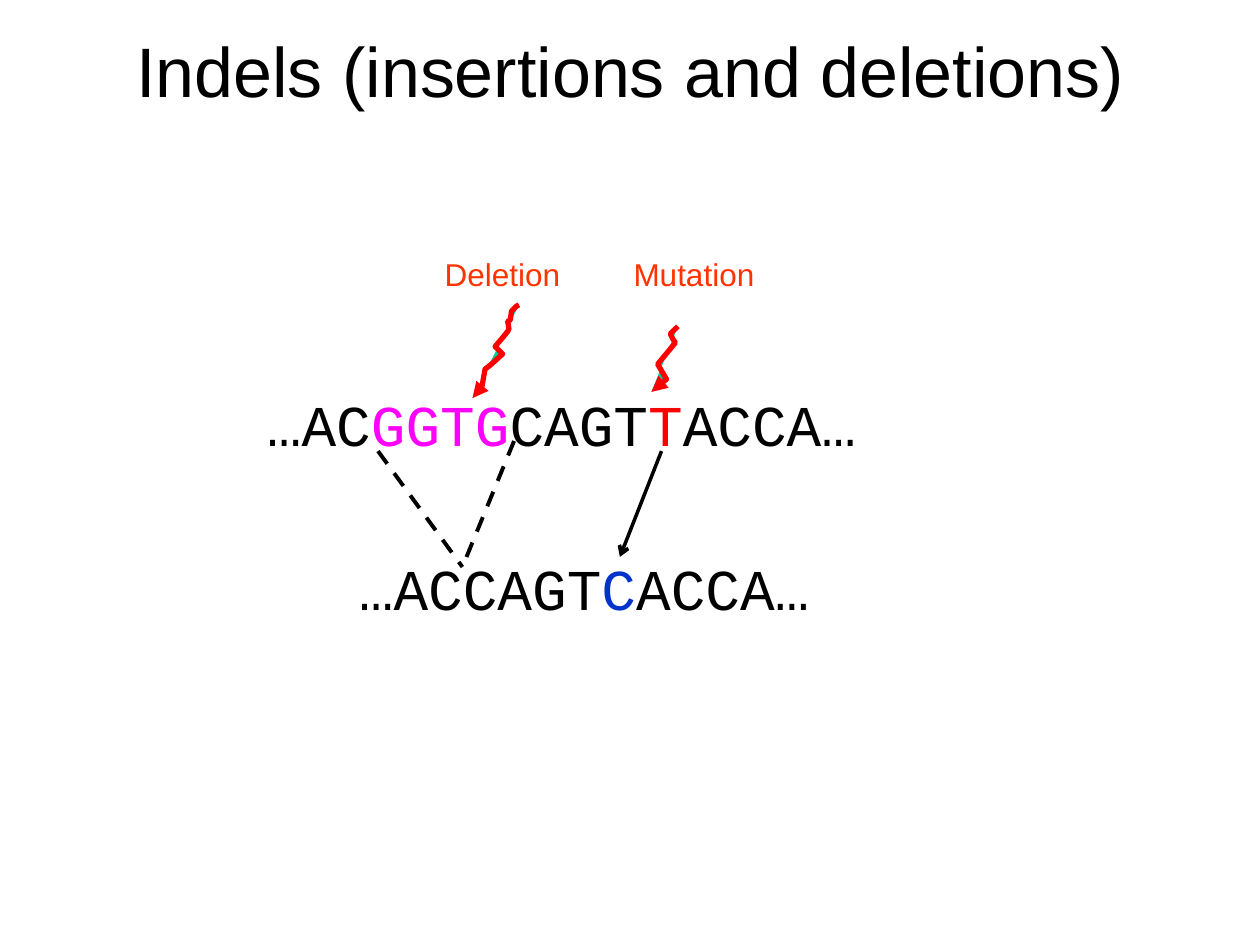
from lxml.etree import SubElement
from pptx import Presentation
from pptx.dml.color import RGBColor
from pptx.enum.dml import MSO_LINE
from pptx.enum.shapes import MSO_CONNECTOR
from pptx.enum.text import MSO_ANCHOR, PP_ALIGN
from pptx.oxml.ns import qn
from pptx.util import Inches, Pt

COLOURS = {
    "black": "000000", "deleted": "FF00FF", "mutated": "FF0000",
    "label": "FF3300", "result": "0033CC", "squiggle": "FF0000", "squiggle_fill": "00CC99",
}

deck = Presentation()
deck.slide_width, deck.slide_height = Inches(10), Inches(7.5)
page = deck.slides.add_slide(deck.slide_layouts[6])


def add_text(place, runs, font, size, spacing=None, wrap=False):
    """Add a one-paragraph text box from (text, colour name) runs."""
    box = page.shapes.add_textbox(*(Inches(value) for value in place))
    box.text_frame.word_wrap = wrap
    para = box.text_frame.paragraphs[0]
    para.line_spacing = spacing
    for text, colour in runs:
        span = para.add_run()
        span.text = text
        span.font.name = font
        span.font.size = Pt(size)
        span.font.color.rgb = RGBColor.from_string(COLOURS[colour])
    return box


def style_line(shape, colour, width, dash=None, arrow=None):
    """Style an outline; arrow is an (end tag, arrowhead type) pair."""
    shape.line.color.rgb = RGBColor.from_string(COLOURS[colour])
    shape.line.width = Pt(width)
    if dash:
        shape.line.dash_style = dash
    if arrow:
        end, kind = arrow
        SubElement(shape.line._get_or_add_ln(), qn(end)).set("type", kind)


# DNA before the changes, and the labels above it
add_text((2.02, 3.08, 4.88, 0.62),
         [("…AC", "black"), ("GGTG", "deleted"), ("CAGT", "black"),
          ("T", "mutated"), ("ACCA…", "black")],
         "Courier New", 33, 0.94)
for left, width, label in [(4.93, 1.48, "Mutation"), (3.43, 1.42, "Deletion")]:
    add_text((left, 2, width, 0.47), [(label, "label")], "Arial", 18, 0.93)

# Squiggly arrows, each starting at its arrowhead
deletion_squiggle = [
    (3.75, 3.16), (3.78, 3.14), (3.82, 3.1), (3.85, 2.93), (3.89, 2.9), (3.99, 2.81),
    (3.93, 2.75), (3.99, 2.68), (4.03, 2.63), (4.04, 2.61), (4.03, 2.55), (4.05, 2.54),
    (4.06, 2.47), (4.1, 2.43), (4.12, 2.42),
]
mutation_squiggle = [
    (5.17, 3.11), (5.29, 3.01), (5.22, 2.89), (5.36, 2.72), (5.34, 2.69),
    (5.32, 2.65), (5.38, 2.59),
]
for points in (deletion_squiggle, mutation_squiggle):
    start, *rest = [(Inches(x), Inches(y)) for x, y in points]
    builder = page.shapes.build_freeform(*start)
    builder.add_line_segments(rest, close=False)
    squiggle = builder.convert_to_shape()
    squiggle.shadow.inherit = False
    squiggle.fill.solid()
    squiggle.fill.fore_color.rgb = RGBColor.from_string(COLOURS["squiggle_fill"])
    style_line(squiggle, "squiggle", 3, arrow=("a:headEnd", "triangle"))

# DNA after the changes
add_text((2.75, 4.38, 3.92, 0.62),
         [("…ACCAGT", "black"), ("C", "result"), ("ACCA…", "black")],
         "Courier New", 33, 0.94, wrap=True)

# Dashed lines close the deleted gap; the arrow follows the mutated base
for ends, width, dash, arrow in [
    ((3, 3.58, 3.67, 4.5), 2.25, MSO_LINE.DASH, None),
    ((4.08, 3.5, 3.67, 4.5), 2.25, MSO_LINE.DASH, None),
    ((5.25, 3.58, 4.92, 4.42), 2, None, ("a:tailEnd", "arrow")),
]:
    link = page.shapes.add_connector(MSO_CONNECTOR.STRAIGHT, *(Inches(value) for value in ends))
    style_line(link, "black", width, dash, arrow)
    SubElement(link._element.spPr, qn("a:effectLst"))

title = add_text((0.25, 0.14, 9.5, 0.83), [("Indels (insertions and deletions)", "black")],
                 "Arial", 40, wrap=True)
title.text_frame.vertical_anchor = MSO_ANCHOR.MIDDLE
title.text_frame.paragraphs[0].alignment = PP_ALIGN.CENTER

deck.save("out.pptx")
